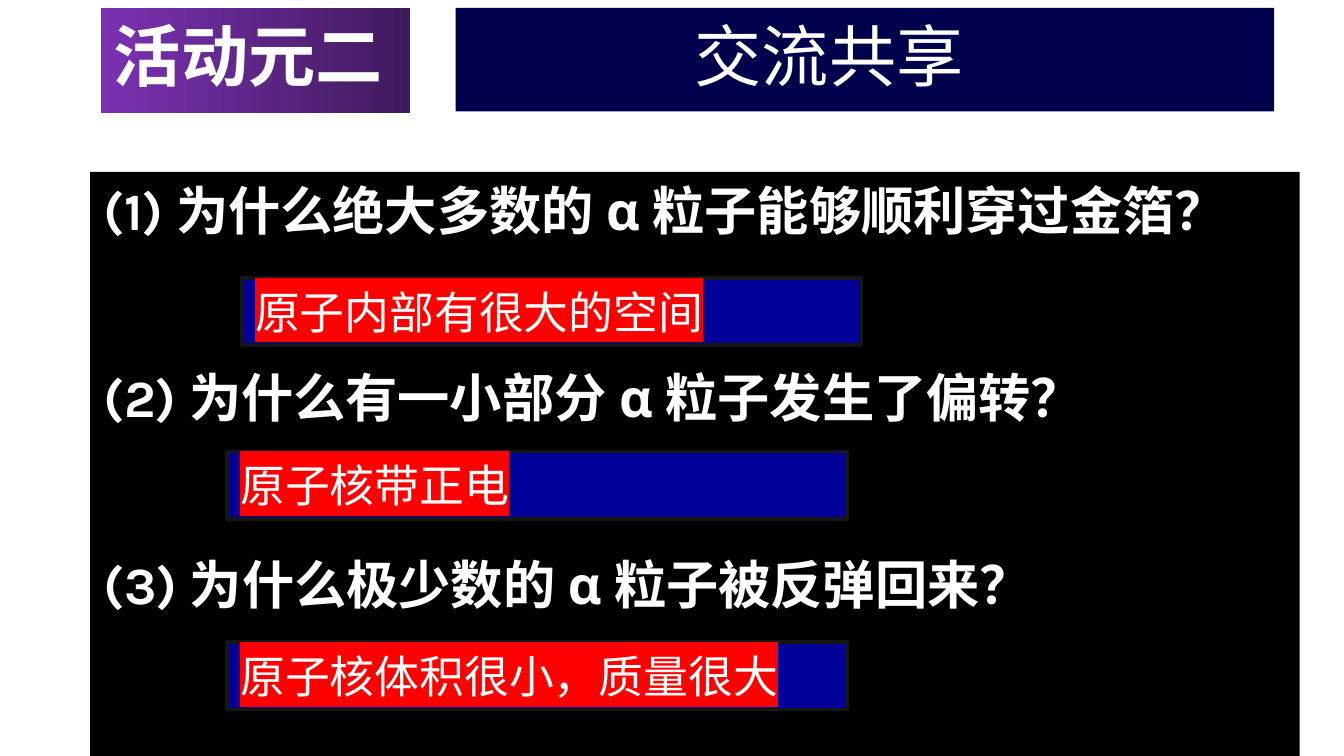
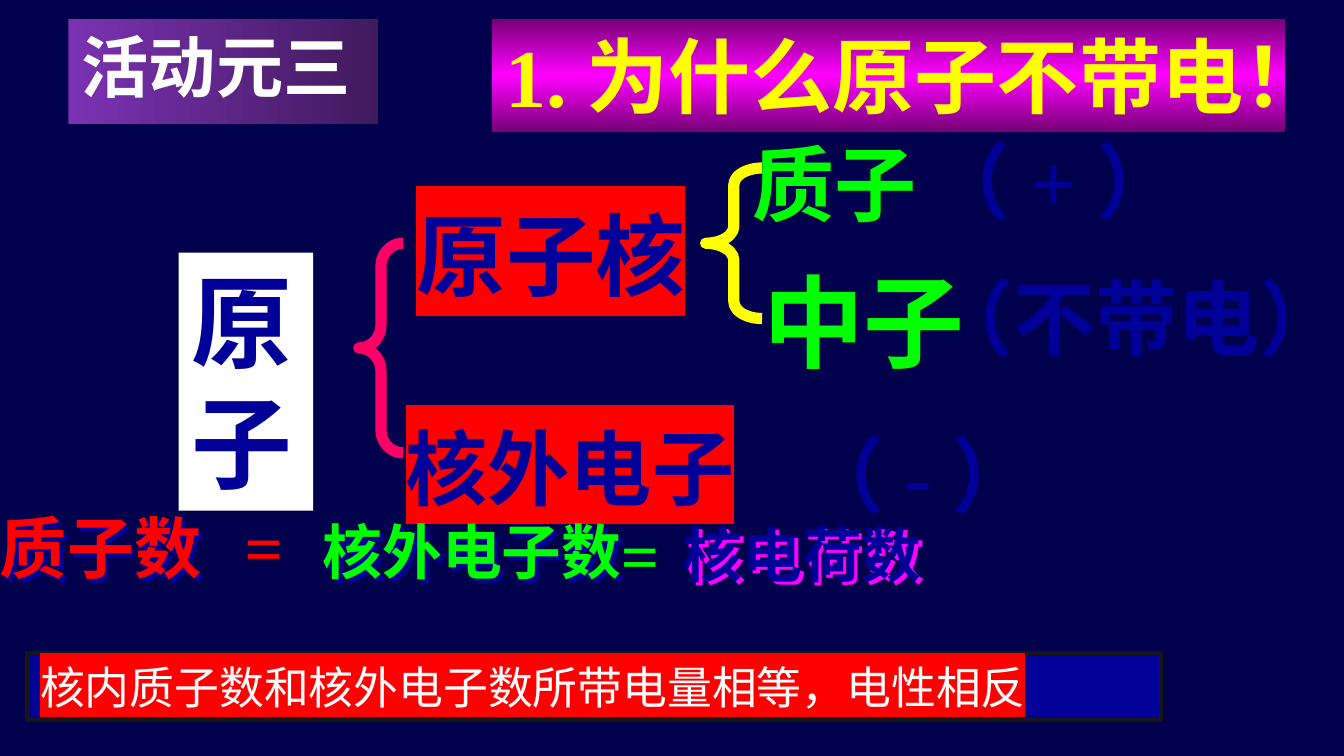
from lxml import etree
from pptx import Presentation
from pptx.dml.color import RGBColor
from pptx.enum.shapes import MSO_SHAPE as Preset
from pptx.enum.text import MSO_ANCHOR as Anchor, MSO_AUTO_SIZE as AutoSize, PP_ALIGN as Align
from pptx.oxml.ns import qn
from pptx.util import Inches, Pt

COLORS = {
    "white": "FFFFFF", "black": "000000", "navy": "00004C", "blue": "010199",
    "ink": "000099", "edge": "161616", "red": "FF0000", "green": "00FF00",
    "yellow": "FFFF00", "pink": "FF0066", "magenta": "FF00FF", "plum": "760076",
    "violet": "7B32B2", "grape": "401A5D",
}
KARLA, TIMES, NOTO = "Karla", "Times New Roman", "Noto Sans CJK SC"


def rgb(name):
    return RGBColor.from_string(COLORS[name])


def add_color(parent, name):
    return etree.SubElement(parent, qn("a:srgbClr"), val=COLORS[name])


def write_text(shape, text, size=44, font=TIMES, color="ink", bold=True,
               highlight=None, inset=None, indent=0, gap=0, wrap=True, grow=False):
    frame = shape.text_frame
    frame.word_wrap = wrap
    frame.auto_size = AutoSize.SHAPE_TO_FIT_TEXT if grow else AutoSize.NONE
    frame.vertical_anchor = Anchor.TOP
    if inset is not None:
        frame.margin_left = frame.margin_right = Inches(inset)
        frame.margin_top = frame.margin_bottom = Inches(inset)
    for index, line in enumerate(text.split("\n")):
        paragraph = frame.paragraphs[0] if index == 0 else frame.add_paragraph()
        paragraph.alignment = Align.LEFT
        if index:
            paragraph.space_before = Pt(gap)
        if indent:
            paragraph._p.get_or_add_pPr().set("marL", str(Inches(indent)))
        run = paragraph.add_run()
        run.text = line
        run.font.size = Pt(size)
        run.font.bold = bold
        run.font.color.rgb = rgb(color)
        run.font.name = font
        properties = run._r.get_or_add_rPr()
        etree.SubElement(properties, qn("a:ea"), typeface=NOTO)
        if highlight:
            marker = etree.Element(qn("a:highlight"))
            add_color(marker, highlight)
            properties.find(qn("a:latin")).addprevious(marker)


class Deck:
    def __init__(self):
        self.presentation = Presentation()
        self.presentation.slide_width = Inches(10)
        self.presentation.slide_height = Inches(10 * 9 / 16)
        self.slide = None

    def start_slide(self, background):
        self.slide = self.presentation.slides.add_slide(self.presentation.slide_layouts[6])
        self.slide.background.fill.solid()
        self.slide.background.fill.fore_color.rgb = rgb(background)

    def preset(self, kind, place):
        shape = self.slide.shapes.add_shape(kind, *map(Inches, place))
        shape.shadow.inherit = False
        shape.line.fill.background()
        return shape

    def panel(self, place, fill, text, line=None, **style):
        shape = self.preset(Preset.RECTANGLE, place)
        shape.fill.solid()
        shape.fill.fore_color.rgb = rgb(fill)
        if line:
            shape.line.color.rgb = rgb(line)
            shape.line.width = Pt(2)
        write_text(shape, text, **style)

    def gradient_panel(self, place, colors, angle, text, **style):
        shape = self.preset(Preset.RECTANGLE, place)
        shape.fill.gradient()
        shape.fill.gradient_angle = angle
        stops = shape._element.spPr.find(".//" + qn("a:gsLst"))
        for stop in list(stops):
            stops.remove(stop)
        for index, color in enumerate(colors):
            position = index * 100000 // (len(colors) - 1)
            add_color(etree.SubElement(stops, qn("a:gs"), pos=str(position)), color)
        write_text(shape, text, **style)

    def activity(self, left, top, text):
        self.gradient_panel((left, top, 2.3, 0.78), ("violet", "grape"), 0, text,
                            size=36, font=KARLA, color="white")

    def answer(self, left, top, width, text):
        self.panel((left, top, width, 0.5), "blue", text, line="edge", size=24,
                   font=KARLA, color="white", bold=False, highlight="red")

    def brace(self, place, color, curve):
        shape = self.preset(Preset.LEFT_BRACE, place)
        shape.fill.background()
        shape.line.color.rgb = rgb(color)
        shape.line.width = Pt(6)
        shape.adjustments[0] = curve
        shape.adjustments[1] = 0.5

    def label(self, place, text, shadow=None, **style):
        box = self.slide.shapes.add_textbox(*map(Inches, place))
        write_text(box, text, grow=True, **style)
        if shadow:
            effects = etree.SubElement(box._element.spPr, qn("a:effectLst"))
            outer = etree.SubElement(effects, qn("a:outerShdw"), dist="35921",
                                     dir="2700000", algn="ctr", rotWithShape="0")
            add_color(outer, shadow)


def build_sharing(deck):
    deck.start_slide("white")
    deck.panel((3.39, 0.06, 6.09, 0.77), "navy", "交流共享", size=36, font=KARLA,
               color="white", bold=False, indent=1.68)
    questions = ("(1)为什么绝大多数的α粒子能够顺利穿过金箔？",
                 "(2)为什么有一小部分α粒子发生了偏转？",
                 "(3)为什么极少数的α粒子被反弹回来？")
    deck.panel((0.67, 1.28, 9, 4.37), "black", "\n".join(questions), size=28,
               font=KARLA, color="white", gap=66.4)
    for left, top, text in ((1.8, 2.07, "原子内部有很大的空间"),
                            (1.69, 3.36, "原子核带正电"),
                            (1.69, 4.78, "原子核体积很小，质量很大")):
        deck.answer(left, top, 4.61, text)
    deck.activity(0.75, 0.06, "活动元二")


def build_neutral_atom(deck):
    deck.start_slide("navy")
    deck.panel((1.33, 1.88, 1, 1.92), "white", "原子", size=54)
    deck.brace((2.67, 1.81, 0.33, 1.56), "pink", 0.52)
    deck.label((3, 1.44, 2.42, 0.91), "原子核", size=48, highlight="red")
    deck.label((2.92, 3.06, 2.95, 0.84), "核外电子", highlight="red")
    deck.brace((5.25, 1.25, 0.42, 1.12), "yellow", 0.3)
    deck.label((5.5, 0.94, 1.7, 0.84), "质子", color="green")
    deck.label((5.58, 1.88, 1.75, 1.01), "中子", size=54, color="green")
    deck.gradient_panel((3.66, 0.14, 5.9, 0.84), ("plum", "magenta", "plum"), 90,
                        "1.为什么原子不带电！", color="yellow")

    for place, text, size, font, color, shadow, wrap in (
            ((0, 3.77, 1.83, 0.61), "质子数", 36, NOTO, "red", "ink", True),
            ((1.82, 3.76, 0.29, 0.61), "=", 36, TIMES, "red", None, False),
            ((2.4, 3.83, 2.25, 0.54), "核外电子数", 32, NOTO, "green", "ink", False),
            ((4.62, 3.82, 0.29, 0.61), "=", 36, TIMES, "green", None, False),
            ((5.08, 3.85, 2.08, 0.54), "核电荷数", 32, NOTO, "ink", "magenta", True)):
        deck.label(place, text, shadow=shadow, size=size, font=font, color=color,
                   inset=0, wrap=wrap)

    for left, top, width, charge in ((6.83, 1.94, 4.07, "（不带电）"),
                                     (6.81, 0.92, 2.13, "（+）"),
                                     (5.87, 3.11, 2.36, "（-）")):
        deck.label((left, top, width, 0.84), charge)
    deck.activity(0.51, 0.14, "活动元三")
    deck.answer(0.2, 4.86, 8.44, "核内质子数和核外电子数所带电量相等，电性相反")


def main():
    deck = Deck()
    build_sharing(deck)
    build_neutral_atom(deck)
    deck.presentation.save("out.pptx")


if __name__ == "__main__":
    main()
